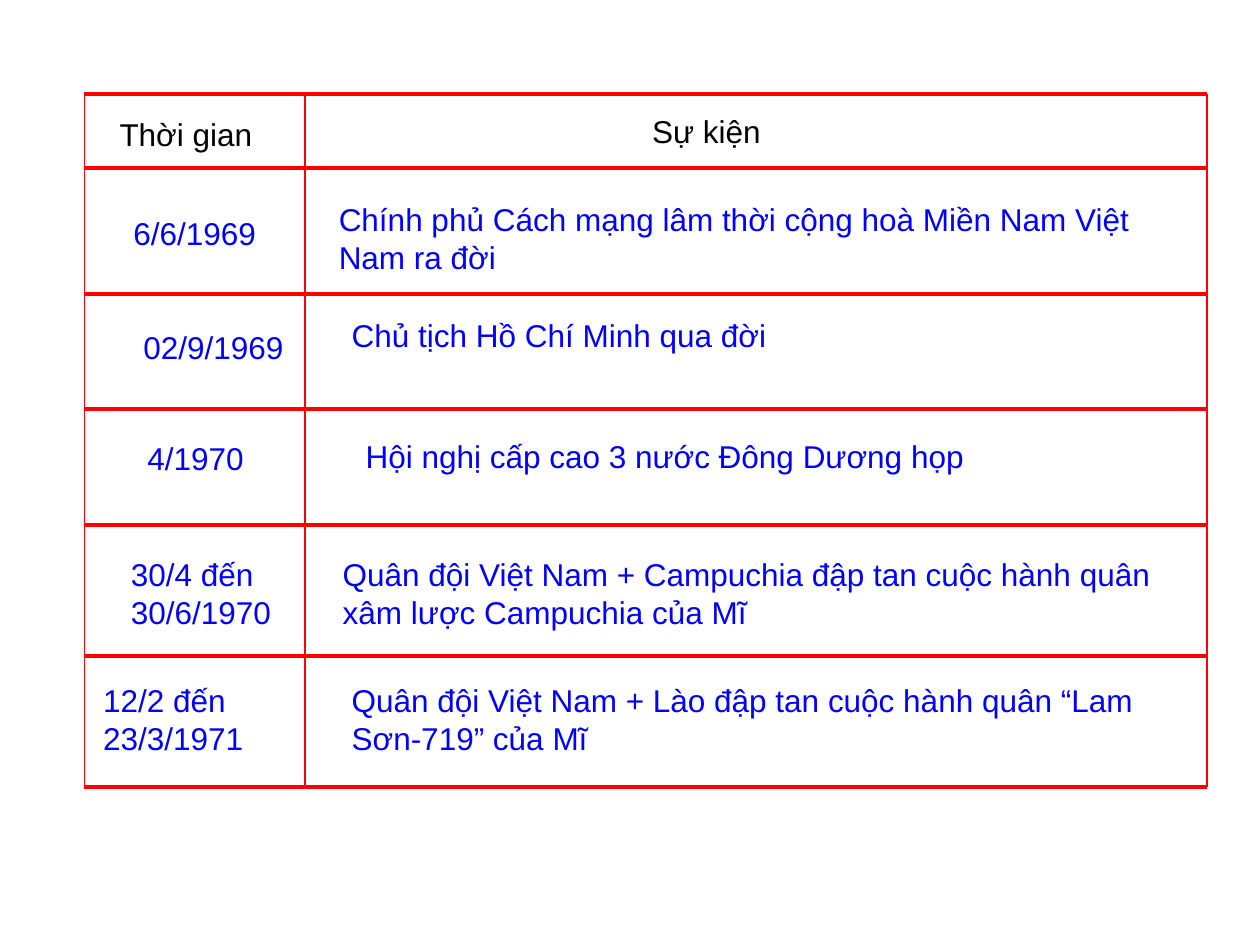
from itertools import pairwise

from lxml.etree import SubElement
from pptx import Presentation
from pptx.dml.color import RGBColor
from pptx.enum.shapes import MSO_CONNECTOR as Connector
from pptx.enum.text import MSO_AUTO_SIZE as AutoSize, PP_ALIGN as Align
from pptx.oxml.ns import qn
from pptx.util import Cm, Pt

RED, BLUE, BLACK = "FF0000", "0000FF", "000000"

# Grid of the timeline, in cm from its top left corner
ROW_EDGES = [0, 1.48, 4.02, 6.35, 8.69, 11.33, 13.97]
COLUMN_EDGES = [0, 4.45, 22.63]
EVENT_WIDTH = 17.15

# Each entry: text, inset from its cell (x, y), width, and format
ROWS = [
    [("Thời gian", 0.46, 0.3, 3.61, {"color": BLACK}),
     ("Sự kiện", 2.16, 0.23, 11.86, {"color": BLACK, "align": Align.CENTER})],
    [("6/6/1969", 0.74, 0.81, 3, {"wrap": False}),
     ("Chính phủ Cách mạng lâm thời cộng hoà Miền Nam Việt Nam ra đời",
      0.43, 0.53, EVENT_WIDTH, {"lines": 2})],
    [("02/9/1969", 0.94, 0.56, 3.35, {"wrap": False}),
     ("Chủ tịch Hồ Chí Minh qua đời", 0.69, 0.33, EVENT_WIDTH, {})],
    [("4/1970", 1.02, 0.48, 2.46, {"wrap": False}),
     ("Hội nghị cấp cao 3 nước Đông Dương họp",
      0.97, 0.43, 12.67, {"wrap": False})],
    [("30/4 đến 30/6/1970", 0.69, 0.48, 3.68, {"lines": 2}),
     ("Quân đội Việt Nam + Campuchia đập tan cuộc hành quân xâm lược "
      "Campuchia của Mĩ", 0.51, 0.48, EVENT_WIDTH, {"lines": 2})],
    [("12/2 đến 23/3/1971", 0.13, 0.38, 3.68, {"lines": 2}),
     ("Quân đội Việt Nam + Lào đập tan cuộc hành quân “Lam Sơn-719” của Mĩ",
      0.69, 0.38, EVENT_WIDTH, {"lines": 2})],
]


def rgb(color):
    return RGBColor.from_string(color)


def add_rule(page, start, end, weight):
    rule = page.shapes.add_connector(
        Connector.STRAIGHT, *(Cm(value) for value in (*start, *end)))
    rule.line.color.rgb = rgb(RED)
    rule.line.width = Pt(weight)
    SubElement(rule._element.spPr, qn("a:effectLst"))


def add_text(page, text, left, top, width, *, lines=1, color=BLUE,
             align=Align.LEFT, wrap=True):
    height = 0.25 + 0.77 * lines
    box = page.shapes.add_textbox(Cm(left), Cm(top), Cm(width), Cm(height))
    frame = box.text_frame
    frame.word_wrap = wrap
    frame.auto_size = AutoSize.SHAPE_TO_FIT_TEXT
    para = frame.paragraphs[0]
    para.alignment = align
    span = para.add_run()
    span.text = text
    span.font.name = "Arial"
    span.font.size = Pt(18)
    span.font.color.rgb = rgb(color)


def add_timeline(page, left, top):
    right = left + COLUMN_EDGES[-1]
    bottom = top + ROW_EDGES[-1]

    # Ruled grid
    for edge in ROW_EDGES:
        add_rule(page, (left, top + edge), (right, top + edge), 2.25)
    for edge in COLUMN_EDGES:
        add_rule(page, (left + edge, top), (left + edge, bottom), 0.75)

    # Dates and events
    for row_top, row in zip(ROW_EDGES, ROWS):
        for column_left, (text, x, y, width, style) in zip(COLUMN_EDGES, row):
            add_text(page, text, left + column_left + x, top + row_top + y,
                     width, **style)


def main():
    deck = Presentation()
    deck.slide_width, deck.slide_height = Cm(25.4), Cm(19.05)
    page = deck.slides.add_slide(deck.slide_layouts[6])
    add_timeline(page, 1.7, 1.9)
    deck.save("out.pptx")


if __name__ == "__main__":
    main()
